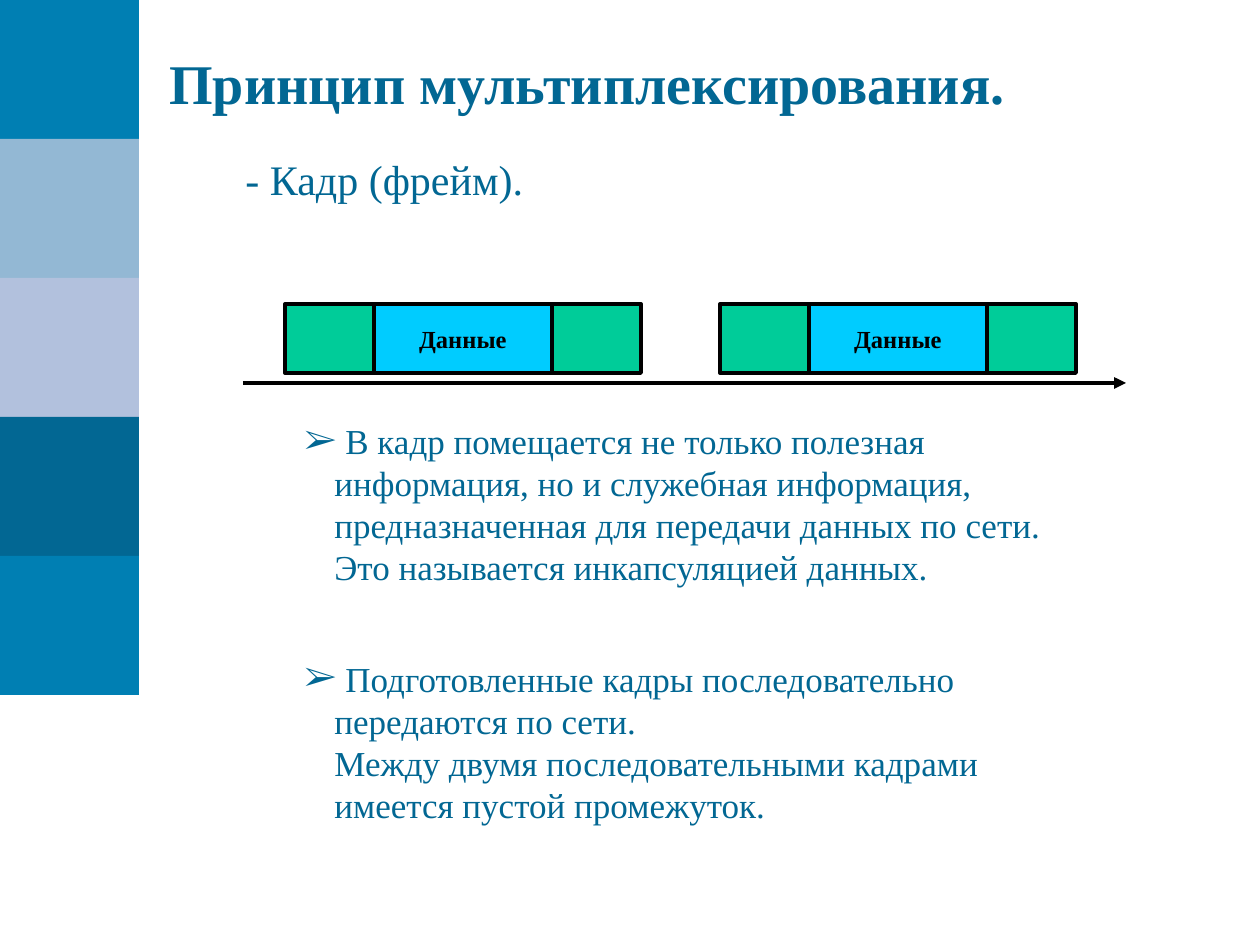
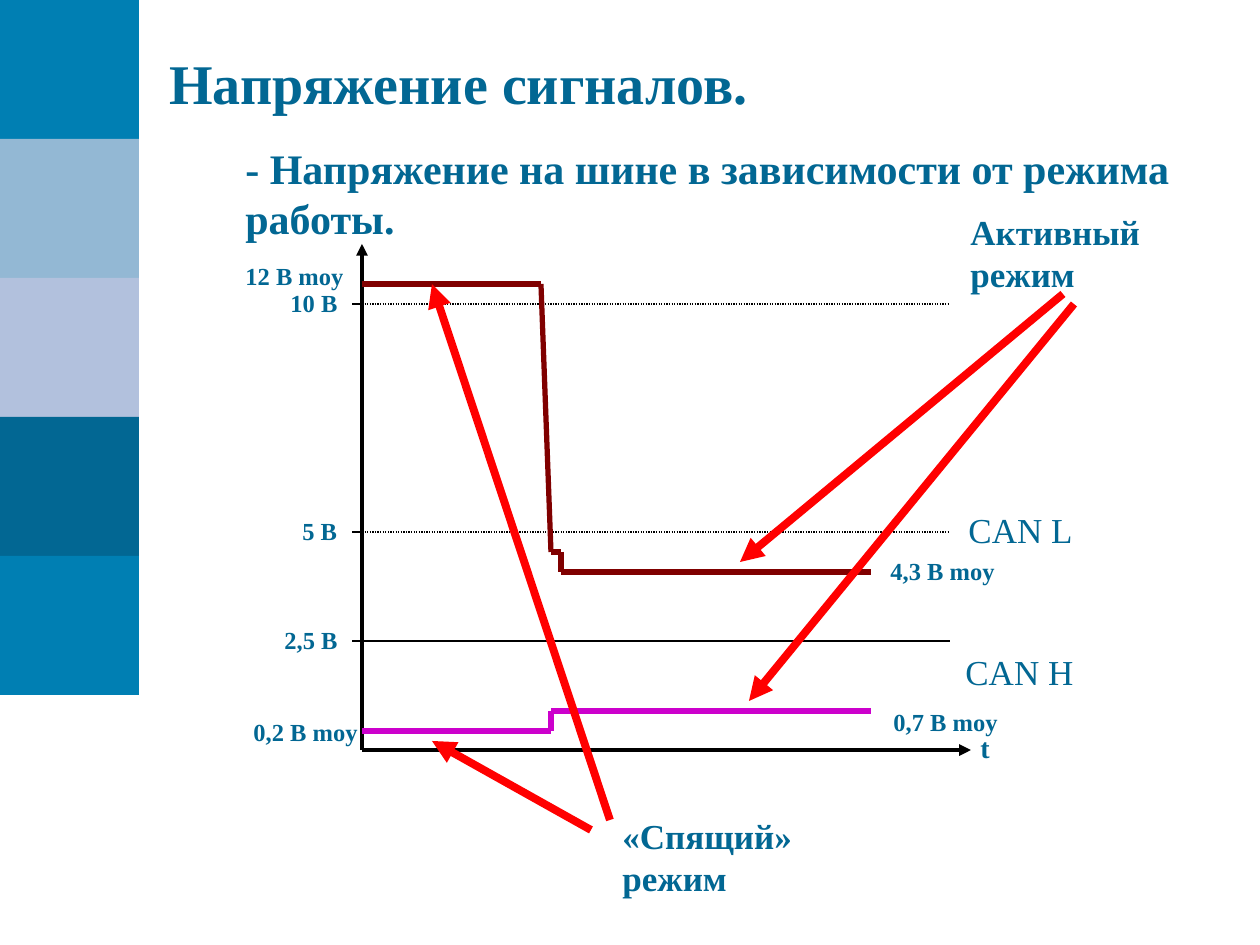
import itertools
import pptx
import pptx.util
import pptx.dml.color
import pptx.enum.dml
import pptx.enum.shapes
import pptx.enum.text
import pptx.oxml
import pptx.oxml.ns

RGB = pptx.dml.color.RGBColor
SHAPE = pptx.enum.shapes.MSO_SHAPE
STRAIGHT = pptx.enum.shapes.MSO_CONNECTOR.STRAIGHT
DOTTED = pptx.enum.dml.MSO_LINE.ROUND_DOT
AUTO = pptx.enum.text.MSO_AUTO_SIZE
ANCHOR = pptx.enum.text.MSO_ANCHOR
ALIGN = pptx.enum.text.PP_ALIGN

BLUE = RGB(0x00, 0x7F, 0xB3)
PALE = RGB(0x93, 0xB8, 0xD4)
LILAC = RGB(0xB2, 0xC1, 0xDD)
DEEP = RGB(0x02, 0x67, 0x93)
BLACK = RGB(0, 0, 0)
CYAN = RGB(0x00, 0xCC, 0xFF)
GREEN = RGB(0x00, 0xCC, 0x99)
MAROON = RGB(0x80, 0, 0)
PURPLE = RGB(0xCC, 0, 0xCC)
RED = RGB(0xFF, 0, 0)
FONT = "Times New Roman"
SCALE = 914400 / 126
LABEL_SLACK = 4

SIDEBAR = [BLUE, PALE, LILAC, DEEP, BLUE]
BAND = 139
TITLE_BOX = (157, 42, 1071, 84)

FRAME_STARTS = [285, 720]
FRAME_PARTS = [("", 89, GREEN), ("Данные", 178, CYAN), ("", 89, GREEN)]
FRAME_TOP, FRAME_HEIGHT = 304, 69
TIME_ARROW = [(243, 383), (1126, 383)]
NOTES = [
    (413, " В кадр помещается не только полезная информация, но и служебная "
          "информация, предназначенная для передачи данных по сети.\n"
          "Это называется инкапсуляцией данных."),
    (651, " Подготовленные кадры последовательно передаются по сети.\n"
          "Между двумя последовательными кадрами имеется пустой промежуток."),
]

ORIGIN = (362, 750)
AXIS_ENDS = [(362, 244), (971, 750)]
TICK_LEFT, GRID_RIGHT = 352, 950
LEVELS = [("10 В", 304, 72, DOTTED), ("5 В", 532, 60, DOTTED), ("2,5 В", 641, 78, None)]
SIGNALS = [
    (MAROON, [(362, 284), (541, 284), (551, 552), (561, 552), (561, 572), (871, 572)]),
    (PURPLE, [(362, 731), (551, 731), (551, 711), (871, 711)]),
]
MODE_ARROWS = [
    [(610, 820), (432, 284)],
    [(591, 830), (432, 741)],
    [(1063, 294), (740, 562)],
    [(1074, 304), (749, 701)],
]
LABELS = [
    ("12 В moy", (233, 255, 123, 42), 14, True),
    ("0,2 В moy", (241, 711, 130, 42), 14, True),
    ("4,3 В moy", (878, 550, 130, 42), 14, True),
    ("0,7 В moy", (881, 701, 130, 42), 14, True),
    ("t", (968, 724, 35, 47), 16, True),
    ("CAN L", (956, 502, 130, 54), 20, False),
    ("CAN H", (953, 644, 134, 54), 20, False),
]
MODES = [
    ("«Спящий» режим", (610, 808, 238, 97)),
    ("Активный режим", (958, 204, 243, 97)),
]


def px(*values):
    return [pptx.util.Emu(round(v * SCALE)) for v in values]


def write(sp, text, size, bold=False, color=DEEP, wrap=True, bullet=False):
    tf = sp.text_frame
    tf.word_wrap = wrap
    p = tf.paragraphs[0]
    p.text = text
    p.line_spacing = pptx.util.Pt(round(size * 1.2, 1))
    if bullet:
        pPr = p._p.get_or_add_pPr()
        indent = px(30)[0]
        pPr.set("marL", str(indent))
        pPr.set("indent", str(-indent))
        ns = pptx.oxml.ns.nsdecls("a")
        for xml in (f'<a:buFont {ns} typeface="{FONT}"/>', f'<a:buChar {ns} char="➢"/>'):
            pPr.append(pptx.oxml.parse_xml(xml))
    style = {"name": FONT, "size": pptx.util.Pt(size), "bold": bold}
    for r in p.runs:
        for key, value in style.items():
            setattr(r.font, key, value)
        r.font.color.rgb = color
    return tf


def add_text(s, text, box, size, grow=True, wrap=True, **style):
    left, top, width, height = box
    if not wrap:
        width += LABEL_SLACK
    sp = s.shapes.add_textbox(*px(left, top, width, height))
    tf = write(sp, text, size, wrap=wrap, **style)
    tf.auto_size = AUTO.SHAPE_TO_FIT_TEXT if grow else AUTO.NONE


def add_rect(s, box, fill, outline=None):
    sp = s.shapes.add_shape(SHAPE.RECTANGLE, *px(*box))
    sp.shadow.inherit = False
    sp.fill.solid()
    sp.fill.fore_color.rgb = fill
    if outline is None:
        sp.line.fill.background()
    else:
        sp.line.color.rgb = outline
        sp.line.width = pptx.util.Pt(2.25)
    return sp


def add_line(s, start, end, color=BLACK, width=0.75, dash=None, arrow=False):
    cn = s.shapes.add_connector(STRAIGHT, *px(*start, *end))
    cn.line.color.rgb = color
    cn.line.width = pptx.util.Pt(width)
    if dash is not None:
        cn.line.dash_style = dash
    ns = pptx.oxml.ns.nsdecls("a")
    if arrow:
        cn.line._get_or_add_ln().append(
            pptx.oxml.parse_xml(f'<a:tailEnd {ns} type="triangle"/>'))
    cn._element.spPr.append(pptx.oxml.parse_xml(f"<a:effectLst {ns}/>"))


def new_slide(prs, title):
    s = prs.slides.add_slide(prs.slide_layouts[6])
    for i, color in enumerate(SIDEBAR):
        add_rect(s, (0, i * BAND, BAND, BAND), color)
    add_text(s, title, TITLE_BOX, 32, grow=False, bold=True)
    return s


def multiplexing_slide(prs):
    s = new_slide(prs, "Принцип мультиплексирования.")
    add_text(s, "- Кадр (фрейм).", (233, 147, 304, 63), 24, wrap=False)
    for left in FRAME_STARTS:
        for text, width, fill in FRAME_PARTS:
            sp = add_rect(s, (left, FRAME_TOP, width, FRAME_HEIGHT), fill, BLACK)
            if text:
                tf = write(sp, text, 14, bold=True, color=BLACK, wrap=False)
                tf.vertical_anchor = ANCHOR.MIDDLE
                tf.paragraphs[0].alignment = ALIGN.CENTER
            left += width
    add_line(s, *TIME_ARROW, width=2.25, arrow=True)
    for top, text in NOTES:
        add_text(s, text, (292, top, 804, 180), 20, bullet=True)


def voltage_slide(prs):
    s = new_slide(prs, "Напряжение сигналов.")
    add_text(s, "- Напряжение на шине в зависимости от режима работы.",
             (233, 136, 1005, 113), 24, bold=True)
    for end in AXIS_ENDS:
        add_line(s, ORIGIN, end, width=2.25, arrow=True)
    for text, y, width, dash in LEVELS:
        add_line(s, (ORIGIN[0], y), (TICK_LEFT, y))
        add_line(s, (ORIGIN[0], y), (GRID_RIGHT, y), dash=dash)
        add_text(s, text, (350 - width, y - 22, width, 42), 14, bold=True, wrap=False)
    for color, points in SIGNALS:
        for start, end in itertools.pairwise(points):
            add_line(s, start, end, color, 3)
    for text, box, size, bold in LABELS:
        add_text(s, text, box, size, bold=bold, wrap=False)
    for text, box in MODES:
        add_text(s, text, box, 20, bold=True)
    for start, end in MODE_ARROWS:
        add_line(s, start, end, RED, 4.5, arrow=True)


def main():
    prs = pptx.Presentation()
    prs.slide_width, prs.slide_height = px(1260, 945)
    multiplexing_slide(prs)
    voltage_slide(prs)
    prs.save("out.pptx")


if __name__ == "__main__":
    main()
